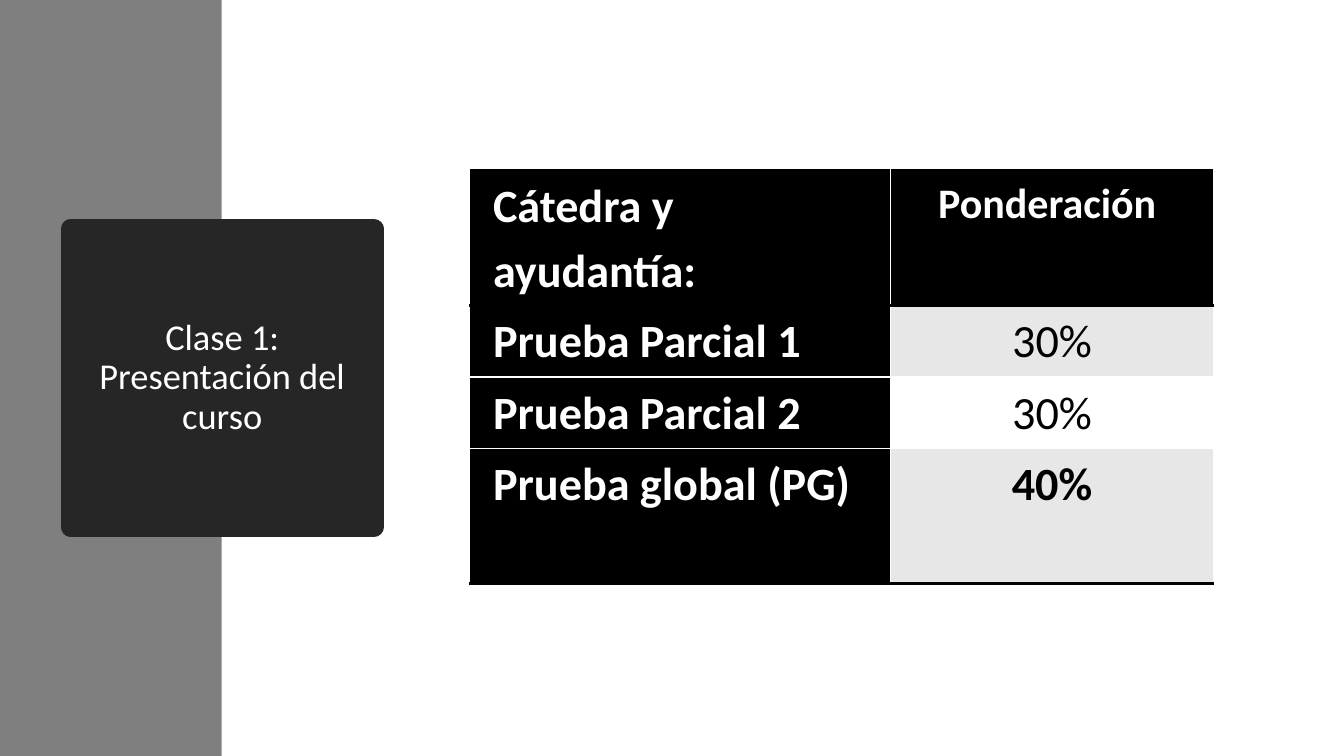
import lxml.etree
import pptx
import pptx.dml.color
import pptx.enum.shapes
import pptx.enum.text
import pptx.oxml.ns
import pptx.util

Inches = pptx.util.Inches
Pt = pptx.util.Pt
qn = pptx.oxml.ns.qn
ALIGN = pptx.enum.text.PP_ALIGN
RECT = pptx.enum.shapes.MSO_SHAPE.RECTANGLE

THEME = {
    "font": "Calibri",
    "band": "7F7F7F",
    "title_box": "262626",
    "dark": "000000",
    "light": "FFFFFF",
    "stripe": "E7E7E7",
    "title_size": 26,
    "header_size": 30,
    "body_size": 33,
}


def rgb(name):
    return pptx.dml.color.RGBColor.from_string(THEME[name])


def set_font(p, size, color, bold):
    p.font.name = THEME["font"]
    p.font.size = Pt(THEME[size])
    p.font.color.rgb = rgb(color)
    p.font.bold = bold


prs = pptx.Presentation()
prs.slide_width = Inches(13.33)
prs.slide_height = Inches(7.5)
s = prs.slides.add_slide(prs.slide_layouts[6])

band = s.shapes.add_shape(RECT, 0, 0, Inches(2.2), Inches(7.5))
band.shadow.inherit = False
band.fill.solid()
band.fill.fore_color.rgb = rgb("band")
band.line.fill.background()

box = s.shapes.add_shape(RECT, Inches(0.7), Inches(2.27), Inches(3.01), Inches(2.96))
box.shadow.inherit = False
box.fill.solid()
box.fill.fore_color.rgb = rgb("title_box")
box.line.color.rgb = rgb("title_box")
box.line.width = Pt(13.75)
lxml.etree.SubElement(box.line._get_or_add_ln(), qn("a:round"))
tf = box.text_frame
tf.word_wrap = True
tf.vertical_anchor = pptx.enum.text.MSO_ANCHOR.MIDDLE
p = tf.paragraphs[0]
p.text = "Clase 1: Presentación del curso"
p.alignment = ALIGN.CENTER
p.line_spacing = 0.9
set_font(p, "title_size", "light", False)

rows = [
    ("Cátedra y ayudantía:", "Ponderación ", 1.34, "dark", True),
    ("Prueba Parcial 1", "30%", 0.71, "stripe", False),
    ("Prueba Parcial 2", "30%", 0.71, "light", False),
    ("Prueba global (PG)", "40%", 1.34, "stripe", True),
]
borders = {0: ["a:lnT", "a:lnB"], 3: ["a:lnB"]}

frame = s.shapes.add_table(
    len(rows), 2, Inches(4.66), Inches(1.69), Inches(7.38), Inches(4.1)
)
table = frame.table
table.columns[0].width = Inches(4.17)
table.columns[1].width = Inches(3.21)

for i, (label, weight, height, fill, bold) in enumerate(rows):
    table.rows[i].height = Inches(height)
    for j, text in enumerate((label, weight)):
        cell = table.cell(i, j)
        cell.margin_left = cell.margin_right = Inches(0.23)
        cell.margin_top = cell.margin_bottom = 0
        cell.fill.solid()
        cell.fill.fore_color.rgb = rgb(fill if j else "dark")
        p = cell.text_frame.paragraphs[0]
        p.text = text
        p.alignment = ALIGN.CENTER if j else ALIGN.LEFT
        p.line_spacing = 1.15
        p.space_after = Pt(10)
        size = "header_size" if i == 0 and j else "body_size"
        color = "dark" if i and j else "light"
        set_font(p, size, color, bold or j == 0)
        for k, tag in enumerate(borders.get(i, [])):
            ln = lxml.etree.Element(qn(tag), w=str(Pt(2)))
            solid = lxml.etree.SubElement(ln, qn("a:solidFill"))
            lxml.etree.SubElement(solid, qn("a:srgbClr"), val=THEME["dark"])
            cell._tc.get_or_add_tcPr().insert(k, ln)

prs.save("out.pptx")
